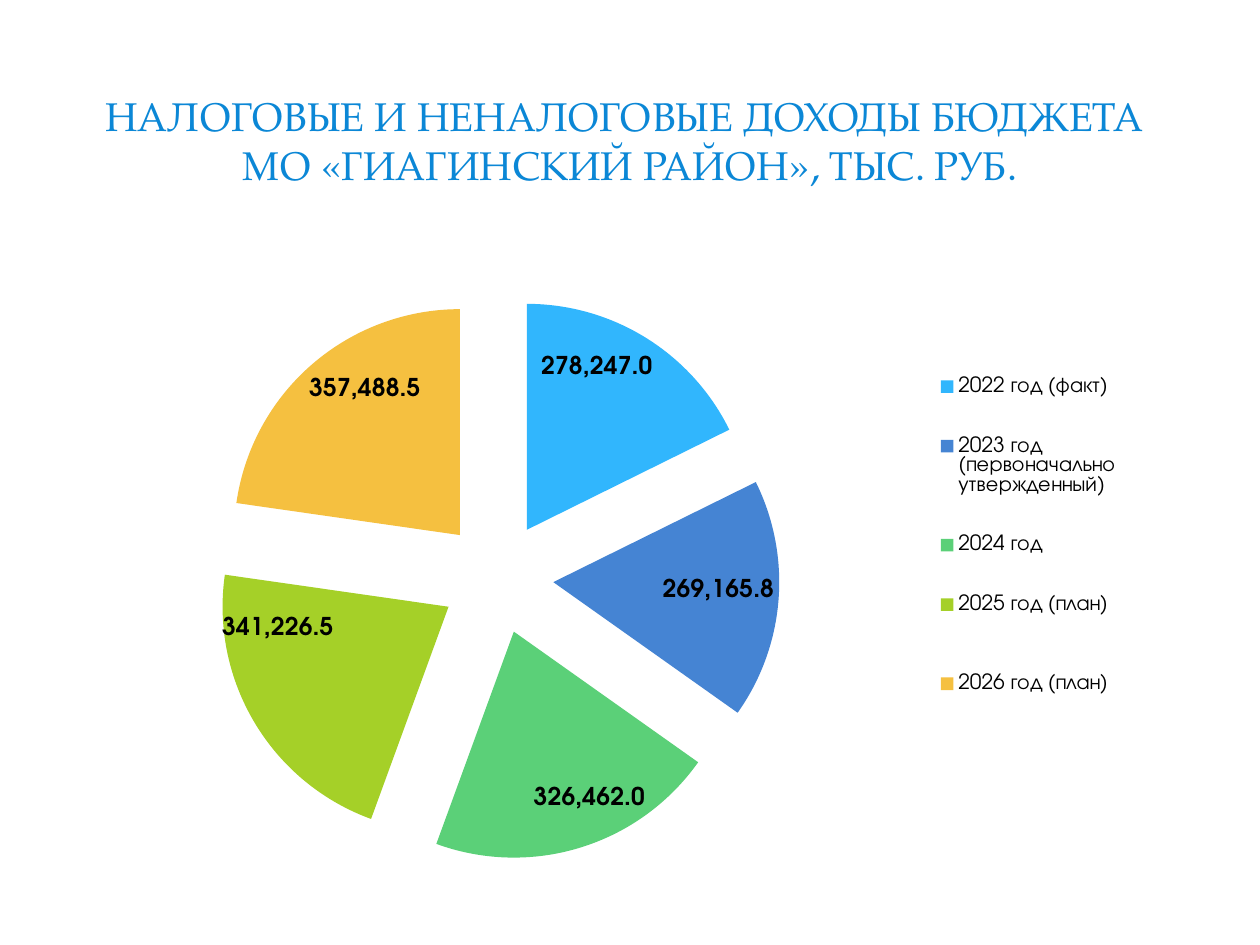
from dataclasses import dataclass

from lxml.etree import SubElement
from pptx import Presentation
from pptx.chart.data import CategoryChartData
from pptx.dml.color import RGBColor
from pptx.enum.chart import XL_CHART_TYPE, XL_LABEL_POSITION, XL_LEGEND_POSITION
from pptx.enum.shapes import MSO_SHAPE
from pptx.enum.text import MSO_ANCHOR, MSO_AUTO_SIZE, PP_ALIGN
from pptx.oxml.ns import qn
from pptx.util import Pt


@dataclass(frozen=True)
class Theme:
    title_font: str = "TeX Gyre Pagella"
    chart_font: str = "TeX Gyre Adventor"
    title_color: str = "0B87D6"
    text_color: str = "000000"
    panel_color: str = "FFFFFF"
    title_size: float = 23
    chart_size: float = 18
    label_size: float = 14
    legend_size: float = 12


@dataclass(frozen=True)
class Panel:
    left: float
    top: float
    width: float
    height: float
    opacity: int


@dataclass(frozen=True)
class Year:
    name: str
    income: float
    color: str
    label_x: float
    label_y: float


THEME = Theme()
NUMBER_FORMAT = "#,##0.0"
TITLE_PANELS = [
    Panel(21.6, 21.6, 676.8, 104.4, 83),
    Panel(29.5, 29.5, 660.2, 87.8, 100),
]
YEARS = [
    Year("2022 год (факт)", 278247, "31B6FD", 0.01, -0.11),
    Year("2023 год (первоначально утвержденный)", 269165.8, "4584D3", 0.05, 0),
    Year("2024 год ", 326462, "5BD078", 0.04, 0.1),
    Year("2025 год (план)\n", 341226.5, "A5D028", -0.07, -0.06),
    Year("2026 год (план)\n", 357488.5, "F5C040", -0.02, -0.1),
]


def style_font(font, name: str, size: float, color: str, bold: bool = False) -> None:
    font.name = name
    font.size = Pt(size)
    font.bold = bold
    font.color.rgb = RGBColor.from_string(color)


def set_layout(layout, **settings) -> None:
    manual = SubElement(layout, qn("c:manualLayout"))
    for tag, value in settings.items():
        SubElement(manual, qn(f"c:{tag}")).set("val", str(value))


def add_panel(slide, panel: Panel) -> None:
    backing = slide.shapes.add_shape(
        MSO_SHAPE.RECTANGLE, Pt(panel.left), Pt(panel.top), Pt(panel.width), Pt(panel.height)
    )
    backing.shadow.inherit = False
    backing.line.fill.background()
    backing.fill.solid()
    backing.fill.fore_color.rgb = RGBColor.from_string(THEME.panel_color)
    color_xml = backing._element.spPr.find(qn("a:solidFill"))[0]
    SubElement(color_xml, qn("a:alpha")).set("val", str(panel.opacity * 1000))


def add_title(slide) -> None:
    title = slide.shapes.title
    for panel in TITLE_PANELS:
        add_panel(slide, panel)
    slide.shapes._spTree.append(title._element)
    title.left, title.top, title.width, title.height = Pt(36.7), Pt(31.7), Pt(646.6), Pt(96.5)
    frame = title.text_frame
    frame.word_wrap = True
    frame.auto_size = MSO_AUTO_SIZE.NONE
    frame.vertical_anchor = MSO_ANCHOR.MIDDLE
    frame.text = "НАЛОГОВЫЕ И НЕНАЛОГОВЫЕ ДОХОДЫ БЮДЖЕТА \vМО «ГИАГИНСКИЙ РАЙОН», ТЫС. РУБ."
    heading = frame.paragraphs[0]
    heading.alignment = PP_ALIGN.CENTER
    style_font(heading.font, THEME.title_font, THEME.title_size, THEME.title_color)


def style_slice(series, index: int, year: Year) -> None:
    point = series.points[index]
    point.format.fill.solid()
    point.format.fill.fore_color.rgb = RGBColor.from_string(year.color)
    point.format.line.fill.background()
    label = point.data_label
    style_font(label.font, THEME.chart_font, THEME.label_size, THEME.text_color, bold=True)
    label.position = XL_LABEL_POSITION.CENTER
    label_xml = series._element.xpath(f"c:dLbls/c:dLbl[c:idx/@val='{index}']")[0]
    layout = SubElement(label_xml, qn("c:layout"))
    label_xml.insert(1, layout)
    set_layout(layout, x=year.label_x, y=year.label_y)


def add_income_chart(slide) -> None:
    data = CategoryChartData(number_format=NUMBER_FORMAT)
    data.categories = [year.name for year in YEARS]
    data.add_series("Series 1", [year.income for year in YEARS])
    chart = slide.shapes.add_chart(
        XL_CHART_TYPE.PIE_EXPLODED, Pt(70.6), Pt(162), Pt(601.2), Pt(339.8), data
    ).chart
    chart.has_title = False
    style_font(chart.font, THEME.chart_font, THEME.chart_size, THEME.text_color)

    plot = chart.plots[0]
    plot.vary_by_categories = True
    series = plot.series[0]
    for explosion in series._element.findall(qn("c:explosion")):
        explosion.set("val", "25")
    labels = series.data_labels
    labels.show_value = True
    labels.number_format = NUMBER_FORMAT
    labels.number_format_is_linked = False
    for index, year in enumerate(YEARS):
        style_slice(series, index, year)

    chart.has_legend = True
    legend = chart.legend
    legend.position = XL_LEGEND_POSITION.RIGHT
    legend.include_in_layout = False
    style_font(legend.font, THEME.chart_font, THEME.legend_size, THEME.text_color)
    legend_layout = SubElement(legend._element, qn("c:layout"))
    legend._element.find(qn("c:legendPos")).addnext(legend_layout)
    for old_layout in legend._element.findall(qn("c:layout"))[1:]:
        legend._element.remove(old_layout)
    set_layout(legend_layout, xMode="edge", yMode="edge", x=0.76, y=0.09, w=0.2, h=0.7)

    plot_area = plot._element.getparent()
    for old_layout in plot_area.findall(qn("c:layout")):
        plot_area.remove(old_layout)
    plot_layout = SubElement(plot_area, qn("c:layout"))
    plot_area.insert(0, plot_layout)
    set_layout(plot_layout, layoutTarget="inner", xMode="edge", yMode="edge",
               x=0, y=0.02, w=0.71, h=0.95)


def main() -> None:
    presentation = Presentation()
    presentation.slide_width, presentation.slide_height = Pt(720), Pt(540)
    slide = presentation.slides.add_slide(presentation.slide_layouts[5])
    add_title(slide)
    add_income_chart(slide)
    presentation.save("out.pptx")


if __name__ == "__main__":
    main()
